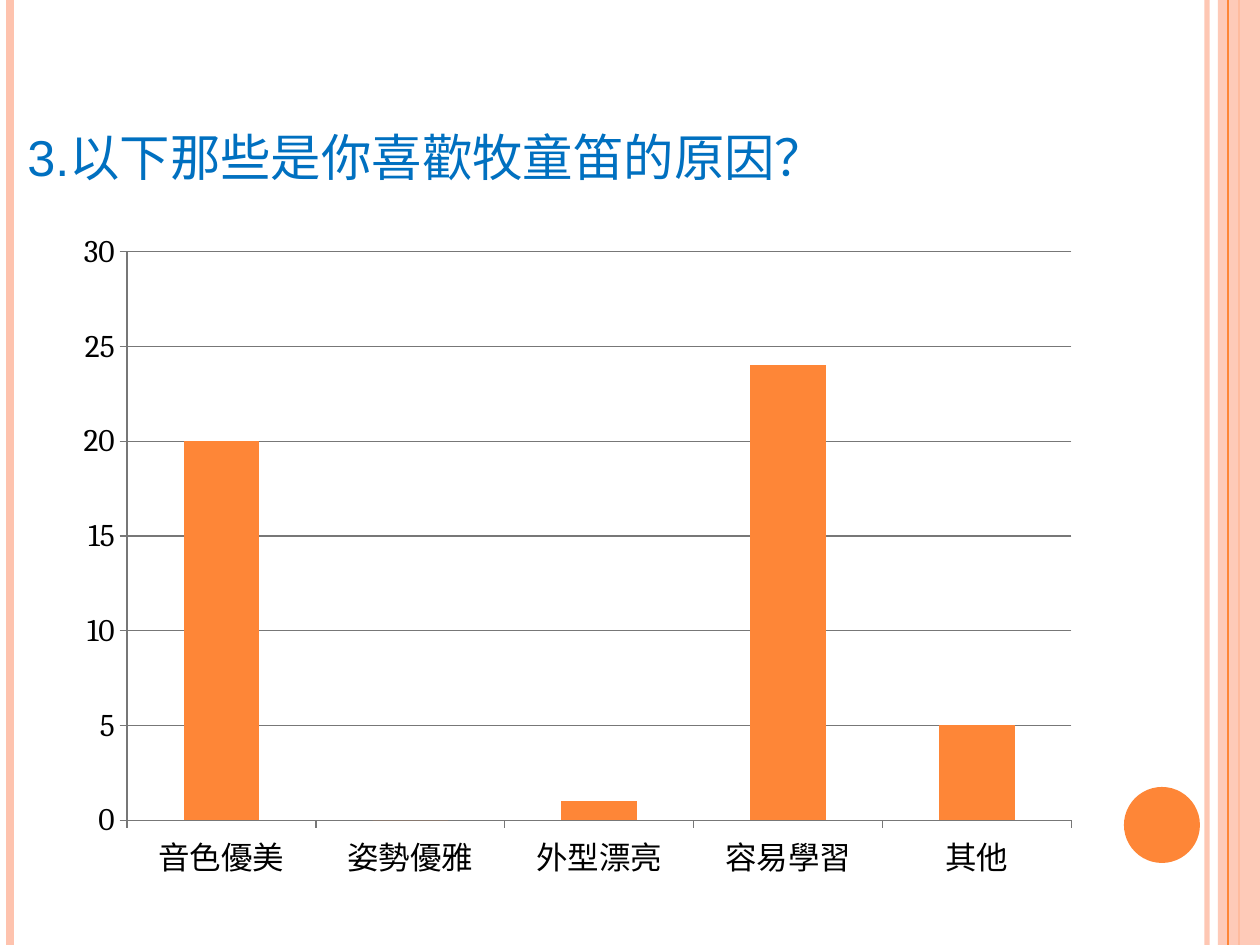
"""Build the survey slide on why pupils like the recorder."""
from typing import NamedTuple

from lxml import etree
from pptx import Presentation
from pptx import util as u
from pptx.chart import data as chart_data
from pptx.dml import color
from pptx.enum import chart as ch, shapes, text
from pptx.oxml import ns

EMU_PER_PX = 914400 / 126
WIDTH, HEIGHT = 1260, 945
COLORS = {"peach": "FEC3AE", "orange": "FE8637", "blue": "0070C0",
          "black": "000000", "grey": "777777"}
REASONS = {"音色優美": 20, "姿勢優雅": 0, "外型漂亮": 1, "容易學習": 24, "其他": 5}


class Stripe(NamedTuple):
    x: int
    color: str
    points: float
    opacity: int = 100


class Block(NamedTuple):
    kind: shapes.MSO_SHAPE
    box: tuple[int, int, int, int]
    color: str
    opacity: int = 100


BACK_STRIPES = [Stripe(1207, "peach", 3, 93), Stripe(10, "peach", 4.5),
                Stripe(1239, "orange", 1.5)]
BAND = Block(shapes.MSO_SHAPE.RECTANGLE, (1218, 0, 42, HEIGHT), "peach", 87)
FRONT_STRIPE = Stripe(1228, "orange", 0.75)
DOT = Block(shapes.MSO_SHAPE.OVAL, (1124, 787, 76, 76), "orange")


def px(value: int) -> u.Emu:
    return u.Emu(round(value * EMU_PER_PX))


def rgb(name: str) -> color.RGBColor:
    return color.RGBColor.from_string(COLORS[name])


def set_opacity(properties, percent: int) -> None:
    if percent < 100:
        tint = next(properties.iter(ns.qn("a:srgbClr")))
        etree.SubElement(tint, ns.qn("a:alpha"), val=str(percent * 1000))


def draw_stripe(slide, stripe: Stripe) -> None:
    rule = slide.shapes.add_connector(
        shapes.MSO_CONNECTOR.STRAIGHT, px(stripe.x), 0, px(stripe.x), px(HEIGHT))
    rule.line.color.rgb = rgb(stripe.color)
    rule.line.width = u.Pt(stripe.points)
    properties = rule._element.spPr
    set_opacity(properties, stripe.opacity)
    etree.SubElement(properties, ns.qn("a:effectLst"))


def draw_block(slide, block: Block) -> None:
    body = slide.shapes.add_shape(block.kind, *map(px, block.box))
    body.shadow.inherit = False
    body.fill.solid()
    body.fill.fore_color.rgb = rgb(block.color)
    body.line.fill.background()
    set_opacity(body._element.spPr, block.opacity)


def add_text(slide, words: str, box: tuple[int, int, int, int], *, font: str,
             size: int, fill: str, anchor: text.MSO_ANCHOR,
             small_caps: bool = False) -> None:
    frame = slide.shapes.add_textbox(*map(px, box)).text_frame
    frame.word_wrap = True
    frame.vertical_anchor = anchor
    run = frame.paragraphs[0].add_run()
    run.text = words
    run.font.name, run.font.size = font, u.Pt(size)
    run.font.color.rgb = rgb(fill)
    if small_caps:
        run._r.get_or_add_rPr().set("cap", "small")


def add_reason_chart(slide, box: tuple[int, int, int, int]) -> None:
    votes = chart_data.CategoryChartData()
    votes.categories = list(REASONS)
    votes.add_series("Series 1", list(REASONS.values()))
    chart = slide.shapes.add_chart(
        ch.XL_CHART_TYPE.COLUMN_CLUSTERED, *map(px, box), votes).chart
    chart.has_legend = chart.has_title = False
    chart.font.name, chart.font.size = "Cambria", u.Pt(18)
    chart.font.color.rgb = rgb("black")
    scale = chart.value_axis
    scale.minimum_scale, scale.maximum_scale, scale.major_unit = 0, 30, 5
    scale.has_major_gridlines = True
    for axis in (chart.category_axis, scale):
        axis.major_tick_mark = ch.XL_TICK_MARK.OUTSIDE
        axis.minor_tick_mark = ch.XL_TICK_MARK.NONE
    for line in (chart.category_axis.format.line, scale.format.line,
                 scale.major_gridlines.format.line):
        line.color.rgb = rgb("grey")
        line.width = u.Pt(0.75)
    plot = chart.plots[0]
    plot.gap_width = 150
    plot.vary_by_categories = False
    columns = plot.series[0].format.fill
    columns.solid()
    columns.fore_color.rgb = rgb("orange")


def main() -> None:
    deck = Presentation()
    deck.slide_width, deck.slide_height = px(WIDTH), px(HEIGHT)
    slide = deck.slides.add_slide(deck.slide_layouts[6])
    for stripe in BACK_STRIPES:
        draw_stripe(slide, stripe)
    draw_block(slide, BAND)
    draw_stripe(slide, FRONT_STRIPE)
    draw_block(slide, DOT)
    add_text(slide, "3.以下那些是你喜歡牧童笛的原因？", (15, 38, 1230, 157),
             font="Arial", size=36, fill="blue",
             anchor=text.MSO_ANCHOR.BOTTOM, small_caps=True)
    add_reason_chart(slide, (63, 220, 1029, 672))
    deck.save("out.pptx")


if __name__ == "__main__":
    main()
